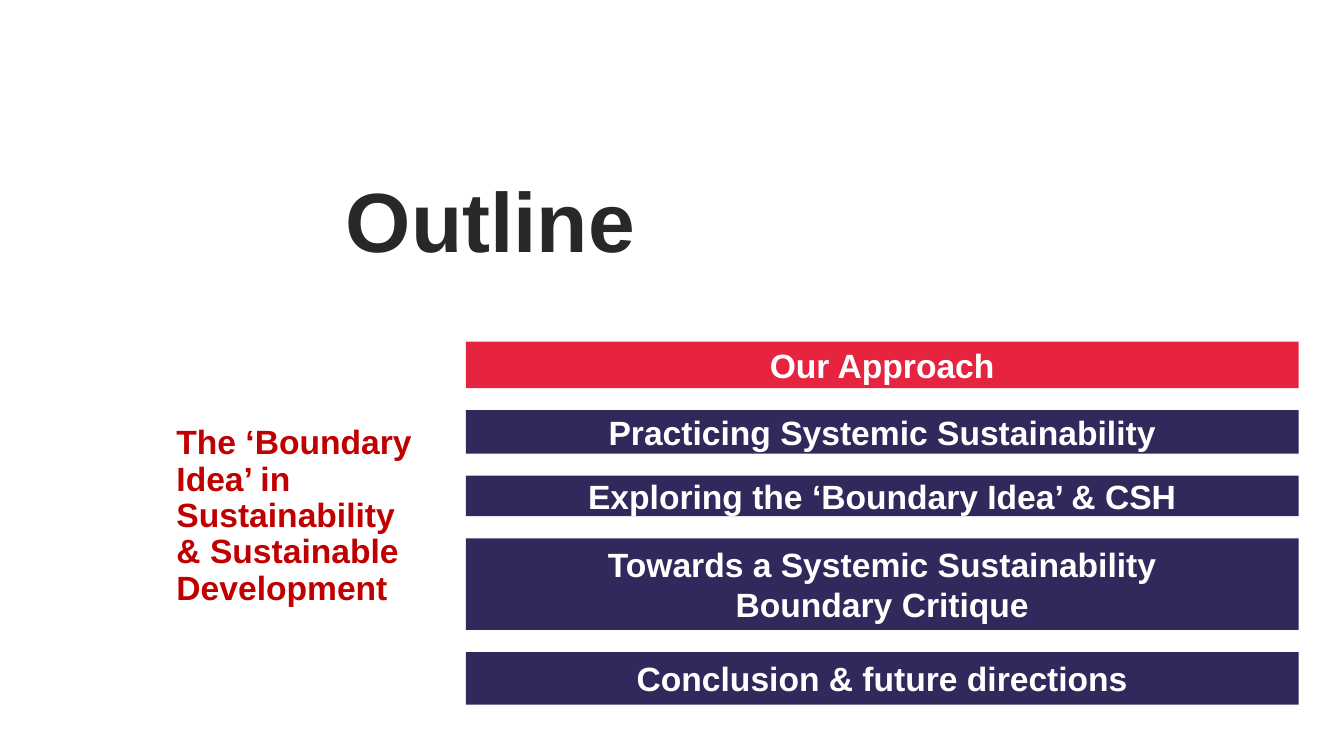
from pptx import Presentation
from pptx.dml.color import RGBColor
from pptx.enum.shapes import MSO_SHAPE
from pptx.enum.text import MSO_ANCHOR, PP_ALIGN
from pptx.util import Inches, Pt

RECT = MSO_SHAPE.RECTANGLE
MIDDLE, BOTTOM = MSO_ANCHOR.MIDDLE, MSO_ANCHOR.BOTTOM
LEFT, CENTER = PP_ALIGN.LEFT, PP_ALIGN.CENTER

COLORS = {
    "title": "272928",
    "theme": "C00000",
    "active": "E7243F",
    "item": "32285B",
    "label": "FFFFFF",
}
GAP = 0.22
ITEMS = [
    (0.46, "active", ["Our Approach"]),
    (0.43, "item", ["Practicing Systemic Sustainability"]),
    (0.40, "item", ["Exploring the ‘Boundary Idea’ & CSH"]),
    (0.91, "item", ["Towards a Systemic Sustainability", "Boundary Critique"]),
    (0.52, "item", ["Conclusion & future directions"]),
]


def color(name):
    """Return the named colour."""
    return RGBColor.from_string(COLORS[name])


def write(shape, lines, tint, size=24, align=LEFT, anchor=MIDDLE,
          inset=(0.1, 0.05, 0.1, 0.05), pitch=1.0):
    """Fill a shape with bold lines of text."""
    frame = shape.text_frame
    frame.word_wrap = True
    frame.vertical_anchor = anchor
    (frame.margin_left, frame.margin_top,
     frame.margin_right, frame.margin_bottom) = map(Inches, inset)
    for i, line in enumerate(lines):
        para = frame.paragraphs[0] if i == 0 else frame.add_paragraph()
        para.alignment = align
        para.line_spacing = pitch
        run = para.add_run()
        run.text = line
        font = run.font
        font.name, font.size, font.bold = "Arial", Pt(size), True
        font.color.rgb = color(tint)


def add_title(slide, left, top, width, height):
    """Place the slide title at the foot of its box."""
    box = slide.shapes.add_textbox(*map(Inches, (left, top, width, height)))
    write(box, ["Outline"], "title", size=60, anchor=BOTTOM,
          inset=(0.31, 0, 0.31, 0), pitch=0.9)


def add_theme(slide, left, top, width, height):
    """Place the theme of the talk beside the agenda."""
    box = slide.shapes.add_textbox(*map(Inches, (left, top, width, height)))
    write(box, ["The ‘Boundary Idea’ in Sustainability & Sustainable Development"],
          "theme", inset=(0.31, 0.08, 0.31, 0.05), pitch=0.9)


def add_agenda(slide, left, top, width):
    """Stack the agenda bars with equal gaps."""
    for height, fill, lines in ITEMS:
        bar = slide.shapes.add_shape(
            RECT, *map(Inches, (left, top, width, height)))
        bar.shadow.inherit = False
        bar.fill.solid()
        bar.fill.fore_color.rgb = color(fill)
        bar.line.fill.background()
        write(bar, lines, "label", align=CENTER)
        top += height + GAP


def main():
    """Build and save the outline slide."""
    deck = Presentation()
    deck.slide_width, deck.slide_height = Inches(13.33), Inches(7.5)
    slide = deck.slides.add_slide(deck.slide_layouts[6])
    add_title(slide, 3.12, 1.77, 8.26, 0.91)
    add_theme(slide, 1.44, 2.89, 3.01, 4.44)
    add_agenda(slide, 4.62, 3.39, 8.26)
    deck.save("out.pptx")


if __name__ == "__main__":
    main()
